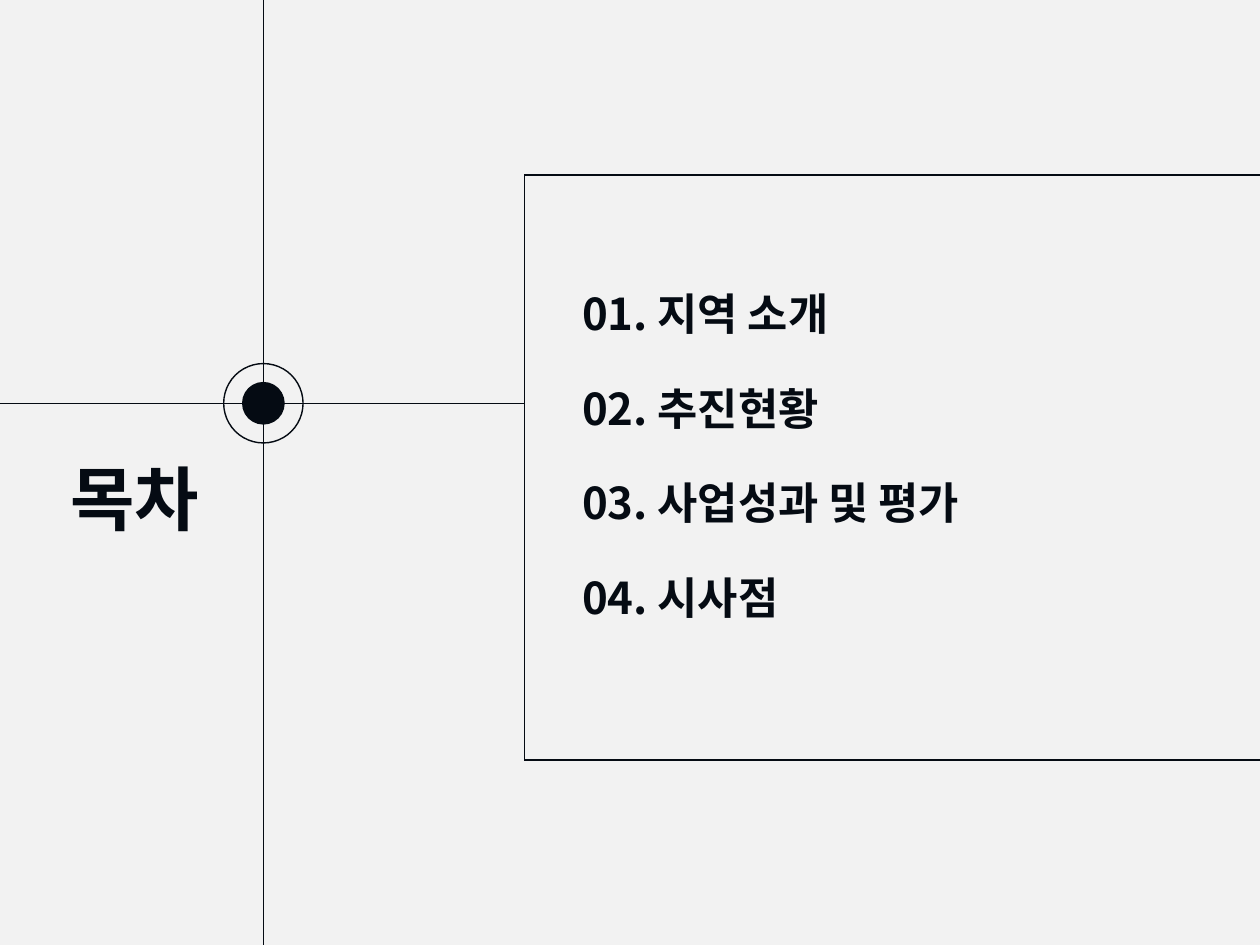
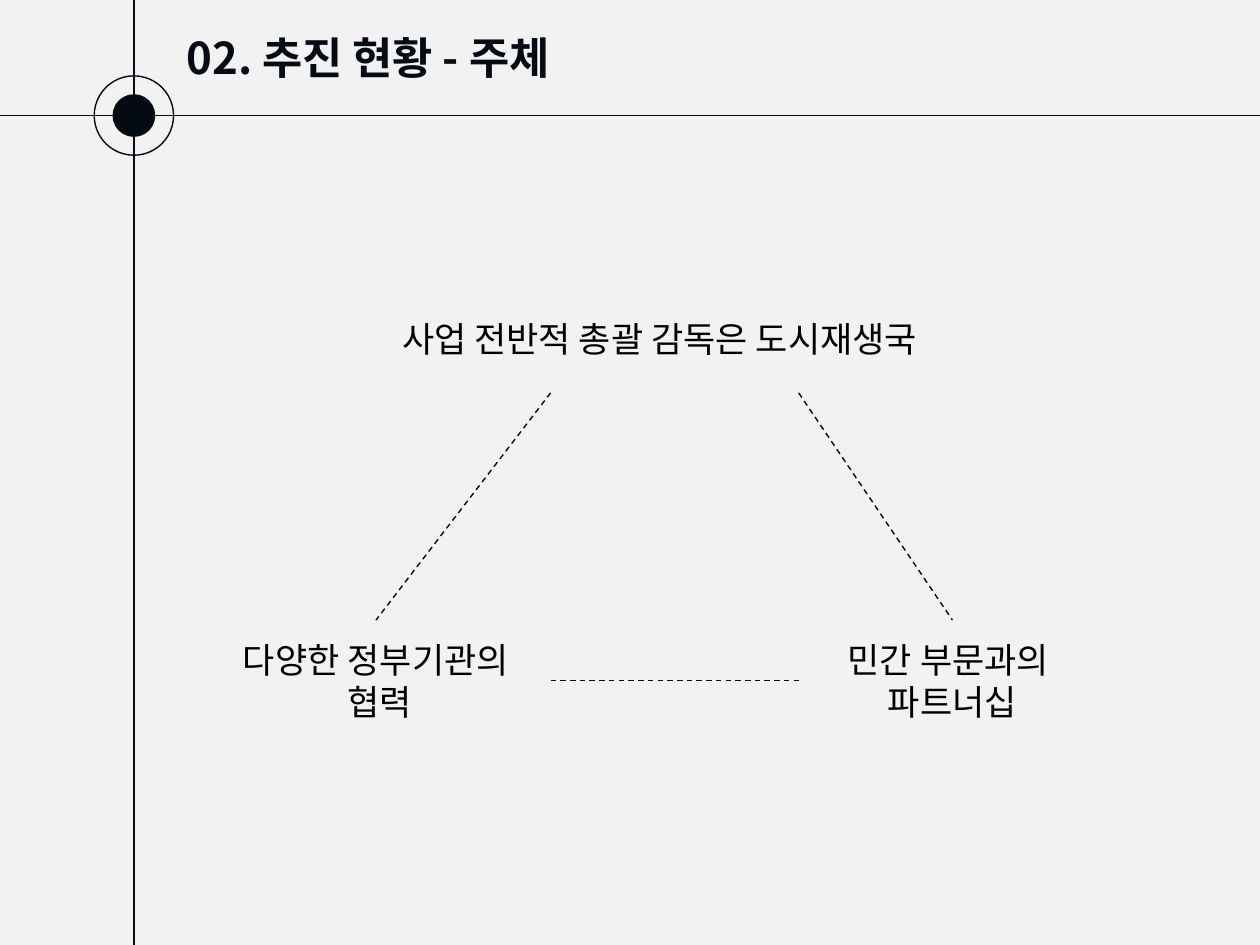
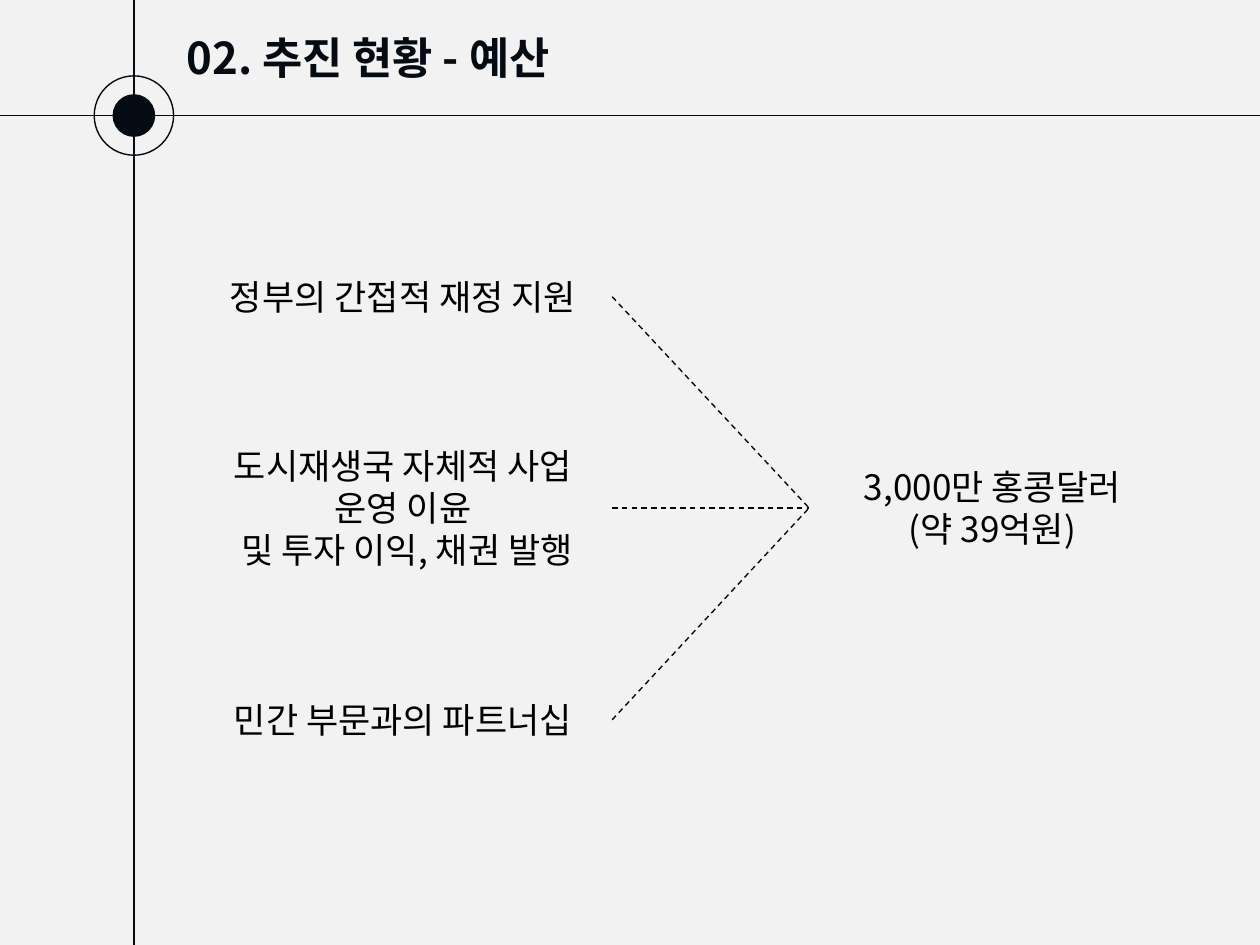
from dataclasses import dataclass

from lxml.etree import SubElement
from pptx import Presentation
from pptx.dml.color import RGBColor
from pptx.enum.dml import MSO_LINE_DASH_STYLE as DASH
from pptx.enum.shapes import MSO_CONNECTOR as CONNECTOR, MSO_SHAPE as SHAPE
from pptx.enum.text import MSO_ANCHOR as ANCHOR, MSO_AUTO_SIZE as AUTO_SIZE, PP_ALIGN as ALIGN
from pptx.oxml.ns import qn
from pptx.util import Cm, Pt

WIDTH, HEIGHT = 25.4, 19.05
TOP, LEFT, BOTTOM, RIGHT = range(4)
TITLE_AND_BODY, TITLE_ONLY = 1, 5


@dataclass(frozen=True)
class Theme:
    font: str = "Noto Sans CJK KR"
    background: RGBColor = RGBColor(0xF2, 0xF2, 0xF2)
    ink: RGBColor = RGBColor(0x05, 0x0B, 0x13)
    black: RGBColor = RGBColor(0, 0, 0)
    cover_size: int = 40
    heading_size: int = 25
    text_size: int = 20
    thin: float = 0.8
    thick: float = 2


def write(sp, text, *, font, size, color, bold=False, align=ALIGN.LEFT,
          anchor=ANCHOR.MIDDLE, gap=0):
    """Fill a shape with one paragraph per line of text, gap points apart."""
    tf = sp.text_frame
    tf.word_wrap = True
    tf.auto_size = AUTO_SIZE.NONE
    tf.vertical_anchor = anchor
    for i, line in enumerate(text.split("\n")):
        p = tf.paragraphs[0] if i == 0 else tf.add_paragraph()
        p.alignment = align
        p.space_before, p.space_after = Pt(0), Pt(gap)
        pPr = p._p.get_or_add_pPr()
        pPr.set("marL", "0")
        pPr.set("indent", "0")
        SubElement(pPr, qn("a:buNone"))
        r = p.add_run()
        r.text = line
        r.font.name, r.font.size, r.font.bold = font, Pt(size), bold
        r.font.color.rgb = color
        SubElement(r._r.get_or_add_rPr(), qn("a:ea")).set("typeface", font)


class Deck:
    def __init__(self, theme):
        self.theme = theme
        self.prs = Presentation()
        self.prs.slide_width, self.prs.slide_height = Cm(WIDTH), Cm(HEIGHT)
        fill = self.prs.slide_master.background.fill
        fill.solid()
        fill.fore_color.rgb = theme.background
        self.s = None

    def add_slide(self, layout):
        self.s = self.prs.slides.add_slide(self.prs.slide_layouts[layout])

    def placeholder(self, index, text, box, **style):
        sp = self.s.placeholders[index]
        sp.left, sp.top, sp.width, sp.height = map(Cm, box)
        write(sp, text, **{"font": self.theme.font, "size": self.theme.heading_size,
                           "color": self.theme.ink, "bold": True, **style})

    def label(self, text, *box):
        sp = self.s.shapes.add_textbox(*map(Cm, box))
        write(sp, text, font=self.theme.font, size=self.theme.text_size,
              color=self.theme.black, align=ALIGN.CENTER)
        return sp

    def circle(self, x, y, diameter, weight, filled=False):
        corner = x - diameter / 2, y - diameter / 2
        sp = self.s.shapes.add_shape(SHAPE.OVAL, *map(Cm, (*corner, diameter, diameter)))
        sp.shadow.inherit = False
        if filled:
            sp.fill.solid()
            sp.fill.fore_color.rgb = self.theme.ink
        else:
            sp.fill.background()
        sp.line.color.rgb = self.theme.ink
        sp.line.width = Pt(weight)

    def line(self, start, end, dashed=False):
        """Draw a line; each end is a point (x, y) or a joint (shape, side)."""
        joined = [not isinstance(e[0], (int, float)) for e in (start, end)]
        points = [(0, 0) if j else e for j, e in zip(joined, (start, end))]
        c = self.s.shapes.add_connector(CONNECTOR.STRAIGHT, *map(Cm, points[0] + points[1]))
        if joined[0]:
            c.begin_connect(*start)
        if joined[1]:
            c.end_connect(*end)
        c.line.color.rgb = self.theme.ink
        c.line.width = Pt(self.theme.thin)
        if dashed:
            c.line.dash_style = DASH.DASH
        SubElement(c._element.spPr, qn("a:effectLst"))

    def crosshair(self, x, y, right=WIDTH):
        self.line((x, 0), (x, HEIGHT))
        self.line((0, y), (right, y))
        self.circle(x, y, 0.79, self.theme.thick, filled=True)
        self.circle(x, y, 1.6, self.theme.thin)

    def content_slide(self, title):
        self.add_slide(TITLE_ONLY)
        self.placeholder(0, title, (3.51, 0, 11.81, 2.29))
        self.crosshair(2.7, 2.33)


def contents(deck):
    deck.add_slide(TITLE_AND_BODY)
    deck.placeholder(0, "목차", (0.99, 8.92, 3.45, 2.21),
                     size=deck.theme.cover_size, align=ALIGN.CENTER)
    chapters = ["지역 소개", "추진현황", "사업성과 및 평가", "시사점"]
    listing = "\n".join(f"{n:02}. {name}" for n, name in enumerate(chapters, 1))
    deck.placeholder(1, listing, (11.48, 5.66, 13, 7.75), anchor=ANCHOR.TOP, gap=24)
    left, top, bottom = 10.57, 3.53, 15.32
    deck.crosshair(5.31, 8.13, right=left)
    deck.line((left, top), (left, bottom))
    for y in (top, bottom):
        deck.line((left, y), (WIDTH, y))


def organisers(deck):
    deck.content_slide("02. 추진 현황 - 주체")
    deck.label("사업 전반적 총괄 감독은 도시재생국", 4.7, 5.92, 17.2, 1.8)
    government = deck.label("다양한 정부기관의\n 협력", 4.06, 12.5, 7.04, 2.44)
    private = deck.label("민간 부문과의 \n파트너십", 16.1, 12.5, 6.2, 2.44)
    deck.line((11.1, 7.92), (government, TOP), dashed=True)
    deck.line((government, RIGHT), (private, LEFT), dashed=True)
    deck.line((16.1, 7.92), (private, TOP), dashed=True)


def budget(deck):
    deck.content_slide("02. 추진 현황 - 예산")
    total = deck.label("3,000만 홍콩달러\n(약 39억원)", 16.31, 9.34, 7.39, 1.8)
    sources = [
        ("정부의 간접적 재정 지원", 5.08, 1.8),
        ("도시재생국 자체적 사업\n운영 이윤\n 및 투자 이익, 채권 발행", 8.74, 3),
        ("민간 부문과의 파트너십", 13.61, 1.8),
    ]
    for text, top, height in sources:
        source = deck.label(text, 3.91, top, 8.43, height)
        deck.line((source, RIGHT), (total, LEFT), dashed=True)


def main():
    deck = Deck(Theme())
    contents(deck)
    organisers(deck)
    budget(deck)
    deck.prs.save("out.pptx")


if __name__ == "__main__":
    main()
